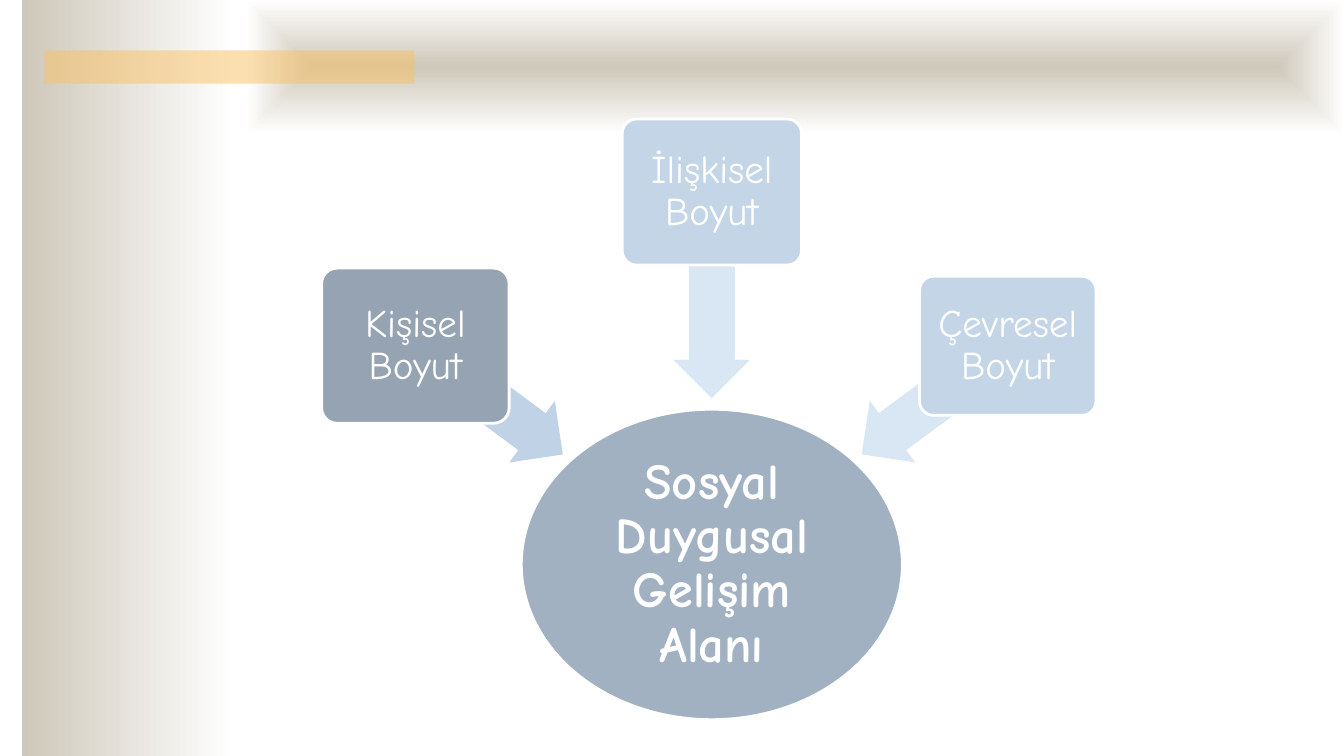
from lxml import etree
from pptx import Presentation
from pptx.dml.color import RGBColor
from pptx.enum.shapes import MSO_SHAPE as Shape
from pptx.enum.text import MSO_ANCHOR as Anchor, PP_ALIGN as Align
from pptx.oxml.ns import qn
from pptx.util import Inches, Pt

# Content: places are left, top, width, height in inches
CORE = {"text": "Sosyal Duygusal Gelişim Alanı", "at": (5.17, 4.06, 3.78, 3.08)}
DIMENSIONS = [
    {"text": "Kişisel Boyut", "at": (3.19, 2.66, 1.86, 1.54), "fill": "first",
     "arrow": (3.95, 3.59, 1.81, 0.76), "turn": 216.5, "arrow_fill": "first_arrow"},
    {"text": "İlişkisel Boyut", "at": (6.17, 1.18, 1.78, 1.45), "fill": "other",
     "arrow": (6.04, 2.55, 2.04, 0.76), "turn": 270, "arrow_fill": "other_arrow"},
    {"text": "Çevresel Boyut", "at": (9.12, 2.74, 1.75, 1.38), "fill": "other",
     "arrow": (8.37, 3.59, 1.81, 0.76), "turn": 323.6, "arrow_fill": "other_arrow"},
]
SIDE_BAND = (0.22, 0, 2.11, 7.5)
TOP_BAND = (2.44, 0, 10.89, 1.33)
ACCENT_BAR = (0.44, 0.5, 3.67, 0.33)

THEME = {
    "font": "Comic Neue", "core_size": 36, "box_size": 28, "outline": 2,
    "white": "FFFFFF", "sand": "CEC8BA", "accent": "FAC164", "core": "A1B1C1",
    "first": "95A3B2", "first_arrow": "C0D3E6",
    "other": "C4D5E8", "other_arrow": "D9E6F3",
}


def color(name):
    return RGBColor.from_string(THEME[name])


def add_figure(page, kind, at, fill=None, outlined=False):
    figure = page.shapes.add_shape(kind, *map(Inches, at))
    figure.shadow.inherit = False
    if fill:
        figure.fill.solid()
        figure.fill.fore_color.rgb = color(fill)
    if outlined:
        figure.line.color.rgb = color("white")
        figure.line.width = Pt(THEME["outline"])
    else:
        figure.line.fill.background()
    return figure


def add_band(page, at, from_center=False):
    band = add_figure(page, Shape.RECTANGLE, at)
    band.fill.gradient()
    band.fill.gradient_angle = 0
    for stop, name, position in zip(band.fill.gradient_stops, ("sand", "white"), (0, 1)):
        stop.color.rgb = color(name)
        stop.position = position
    if from_center:
        linear = band._element.spPr.find(".//" + qn("a:lin"))
        spread = etree.Element(qn("a:path"), {"path": "shape"})
        etree.SubElement(spread, qn("a:fillToRect"), dict.fromkeys("ltrb", "50000"))
        linear.getparent().replace(linear, spread)


def write(figure, text, size, bold, inset):
    frame = figure.text_frame
    margins = dict.fromkeys(
        ("margin_left", "margin_top", "margin_right", "margin_bottom"), Inches(inset))
    para = frame.paragraphs[0]
    span = para.add_run()
    span.text = text
    span.font.color.rgb = color("white")
    formats = [
        (frame, {"word_wrap": True, "vertical_anchor": Anchor.MIDDLE, **margins}),
        (para, {"alignment": Align.CENTER, "line_spacing": 0.9}),
        (span.font, {"name": THEME["font"], "size": Pt(THEME[size]), "bold": bold}),
    ]
    for target, values in formats:
        for name, value in values.items():
            setattr(target, name, value)


def main():
    deck = Presentation()
    deck.slide_width, deck.slide_height = Inches(13.33), Inches(7.5)
    page = deck.slides.add_slide(deck.slide_layouts[6])

    # Background bands and translucent accent bar
    add_band(page, SIDE_BAND)
    add_band(page, TOP_BAND, from_center=True)
    accent = add_figure(page, Shape.RECTANGLE, ACCENT_BAR, "accent")
    tint = accent._element.spPr.find(".//" + qn("a:srgbClr"))
    etree.SubElement(tint, qn("a:alpha"), val="50000")

    # Central area
    core = add_figure(page, Shape.OVAL, CORE["at"], "core", outlined=True)
    write(core, CORE["text"], "core_size", True, 0.03)

    # Dimensions, each box over its arrow
    for dimension in DIMENSIONS:
        arrow = add_figure(page, Shape.LEFT_ARROW, dimension["arrow"], dimension["arrow_fill"])
        arrow.rotation = dimension["turn"]
        arrow.adjustments[0], arrow.adjustments[1] = 0.6, 0.5
        box = add_figure(page, Shape.ROUNDED_RECTANGLE, dimension["at"],
                         dimension["fill"], outlined=True)
        box.adjustments[0] = 0.1
        write(box, dimension["text"], "box_size", False, 0.06)

    deck.save("out.pptx")


if __name__ == "__main__":
    main()
